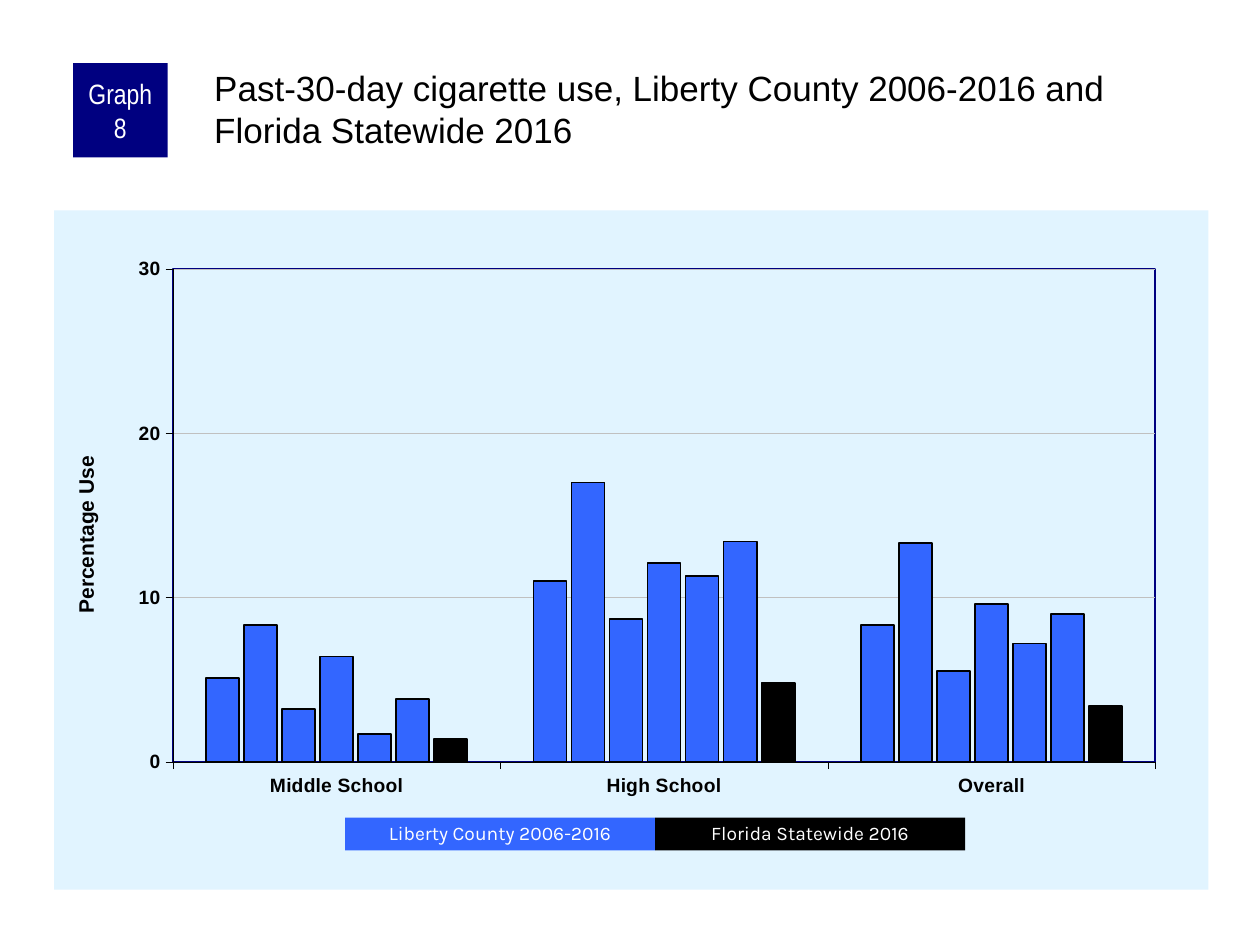
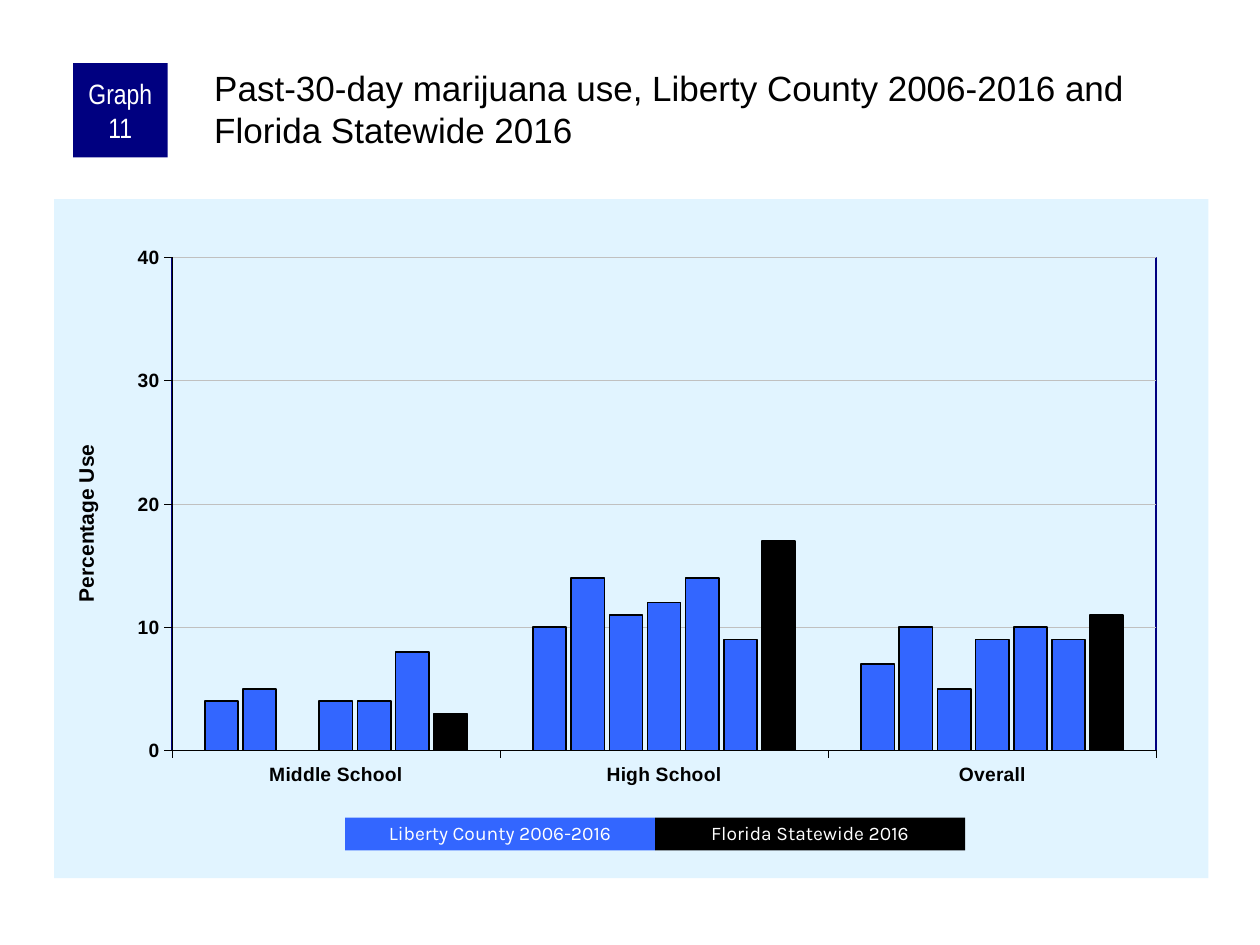
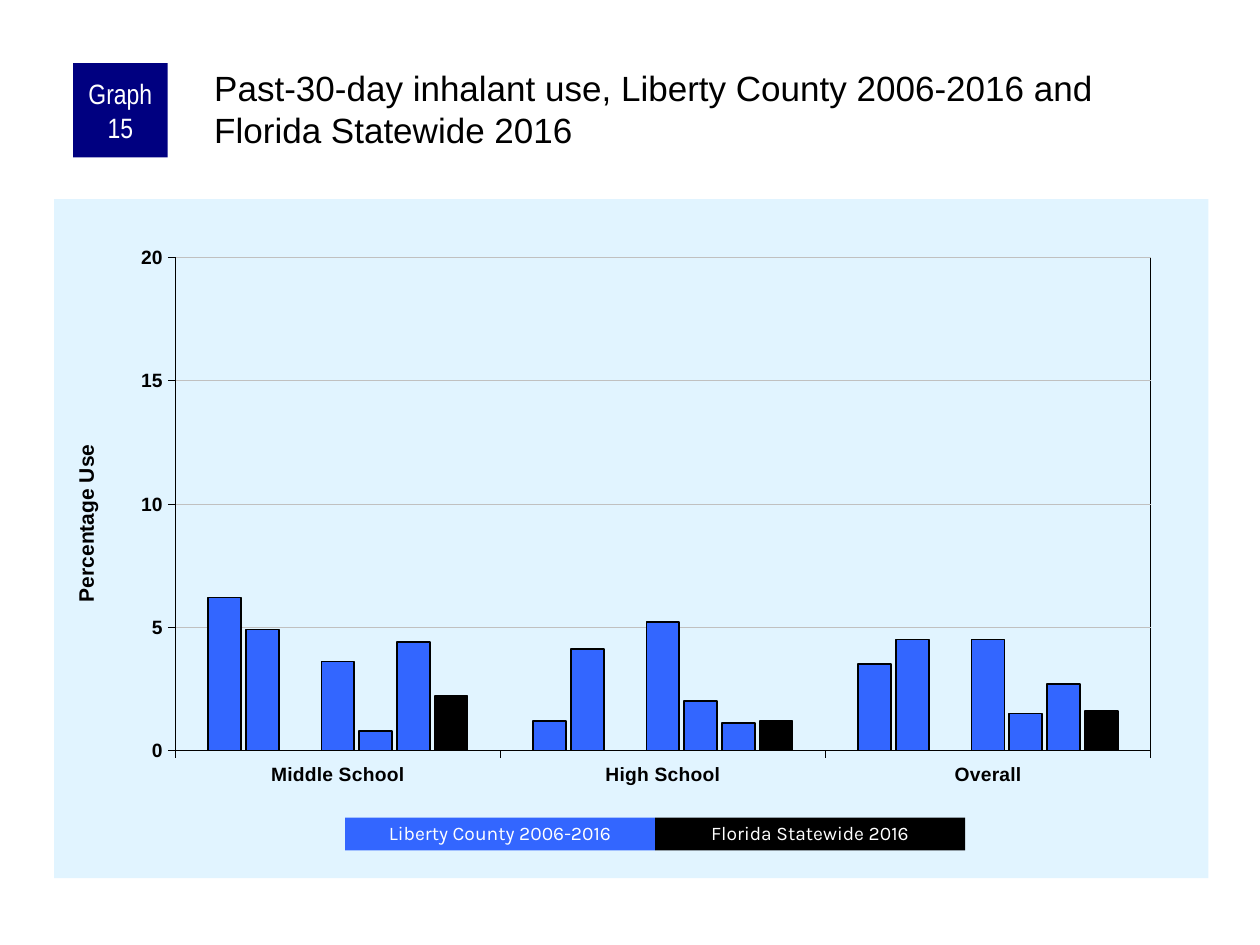
from lxml import etree
from pptx import Presentation
from pptx.chart.data import CategoryChartData
from pptx.dml.color import RGBColor
from pptx.enum.chart import XL_CHART_TYPE, XL_TICK_MARK
from pptx.enum.shapes import MSO_SHAPE
from pptx.enum.text import MSO_ANCHOR, PP_ALIGN
from pptx.oxml.ns import qn
from pptx.util import Inches, Pt

COLUMN = XL_CHART_TYPE.COLUMN_CLUSTERED
OUT, NONE = XL_TICK_MARK.OUTSIDE, XL_TICK_MARK.NONE
RECT = MSO_SHAPE.RECTANGLE
MIDDLE, TOP = MSO_ANCHOR.MIDDLE, MSO_ANCHOR.TOP
LEFT, CENTER = PP_ALIGN.LEFT, PP_ALIGN.CENTER

COLORS = {"navy": "000080", "blue": "3366FF", "black": "000000",
          "white": "FFFFFF", "panel": "E1F4FF", "grid": "C0C0C0"}
GROUPS = ["Middle School", "High School", "Overall"]
KEYS = [("Liberty County 2006-2016", "blue"), ("Florida Statewide 2016", "black")]
KEY_LEFT, KEY_WIDTH = 2.74, 2.46

# Each row of values is one survey; the last row is the statewide one.
# The plot is its left and width in percent of the chart.
GRAPHS = [
    {"number": 8, "drug": "cigarette", "top": 1.67, "peak": 30, "step": 10,
     "plot": (10.3, 85.1), "edge": ("navy", 1),
     "rows": [(5.1, 11, 8.3), (8.3, 17, 13.3), (3.2, 8.7, 5.5), (6.4, 12.1, 9.6),
              (1.7, 11.3, 7.2), (3.8, 13.4, 9), (1.4, 4.8, 3.4)]},
    {"number": 11, "drug": "marijuana", "top": 1.58, "peak": 40, "step": 10,
     "plot": (10.2, 85.3), "edge": ("navy", 1),
     "rows": [(4, 10, 7), (5, 14, 10), (0, 11, 5), (4, 12, 9),
              (4, 14, 10), (8, 9, 9), (3, 17, 11)]},
    {"number": 15, "drug": "inhalant", "top": 1.58, "peak": 20, "step": 5,
     "plot": (10.5, 84.5), "edge": ("black", 0.25),
     "rows": [(6.2, 1.2, 3.5), (4.9, 4.1, 4.5), (0, 0, 0), (3.6, 5.2, 4.5),
              (0.8, 2, 1.5), (4.4, 1.1, 2.7), (2.2, 1.2, 1.6)]},
]


def rgb(name):
    return RGBColor.from_string(COLORS[name])


def style_font(font, size, color="black", name="Arial", bold=False):
    font.size, font.name, font.bold = Pt(size), name, bold
    font.color.rgb = rgb(color)


def style_line(line, color, width):
    line.color.rgb = rgb(color)
    line.width = Pt(width)


def put_text(shape, text, size, color="black", font="Arial", align=LEFT,
             anchor=TOP, insets=(0.1, 0.05, 0.1, 0.05), spacing=None):
    frame = shape.text_frame
    frame.word_wrap = True
    frame.vertical_anchor = anchor
    (frame.margin_left, frame.margin_top,
     frame.margin_right, frame.margin_bottom) = map(Inches, insets)
    para = frame.paragraphs[0]
    para.alignment, para.line_spacing = align, spacing
    run = para.add_run()
    run.text = text
    style_font(run.font, size, color, font)


def add_box(slide, place, fill, text, size, font, **form):
    box = slide.shapes.add_shape(RECT, *map(Inches, place))
    box.shadow.inherit = False
    box.fill.solid()
    box.fill.fore_color.rgb = rgb(fill)
    box.line.fill.background()
    put_text(box, text, size, "white", font, CENTER, MIDDLE, **form)


def add_title(slide, text):
    box = slide.shapes.add_textbox(*map(Inches, (1.67, 0.5, 7.92, 0.83)))
    put_text(box, text, 20, insets=(0.03, 0.03, 0, 0))


def add_legend(slide):
    for i, (label, color) in enumerate(KEYS):
        place = (KEY_LEFT + i * KEY_WIDTH, 6.49, KEY_WIDTH, 0.26)
        add_box(slide, place, color, label, 11, "Karla", spacing=0.9)


def set_layout(parent, index, modes, **sizes):
    """Place a chart part by percentages of the chart's size."""
    for old in parent.findall(qn("c:layout")):
        parent.remove(old)
    layout = etree.Element(qn("c:layout"))
    manual = etree.SubElement(layout, qn("c:manualLayout"))
    parts = modes | {key: size / 100 for key, size in sizes.items()}
    for key, val in parts.items():
        etree.SubElement(manual, qn("c:" + key)).set("val", str(val))
    parent.insert(index, layout)


def add_look(parent, fill=None, line=None):
    """Return shape properties for a chart part, with a fill and a line."""
    props = etree.SubElement(parent, qn("c:spPr"))

    def paint(node, color):
        solid = etree.SubElement(node, qn("a:solidFill"))
        etree.SubElement(solid, qn("a:srgbClr")).set("val", COLORS[color])

    if fill:
        paint(props, fill)
    else:
        etree.SubElement(props, qn("a:noFill"))
    edge = etree.SubElement(props, qn("a:ln"))
    if line:
        edge.set("w", str(Pt(line[1])))
        paint(edge, line[0])
    else:
        etree.SubElement(edge, qn("a:noFill"))
    return props


def style_axes(chart, peak, step):
    for axis in (chart.category_axis, chart.value_axis):
        axis.major_tick_mark, axis.minor_tick_mark = OUT, NONE
        style_font(axis.tick_labels.font, 11, bold=True)
        style_line(axis.format.line, "black", 0.25)
    axis = chart.value_axis
    axis.minimum_scale, axis.maximum_scale, axis.major_unit = 0, peak, step
    axis.has_major_gridlines = True
    style_line(axis.major_gridlines.format.line, "grid", 0.25)
    title = axis.axis_title
    run = title.text_frame.paragraphs[0].add_run()
    run.text = "Percentage Use"
    style_font(run.font, 12, bold=True)
    body = title._element.find(".//" + qn("a:bodyPr"))
    body.set("rot", "-5400000")
    body.set("vert", "horz")
    set_layout(title._element, 1, {"xMode": "edge", "yMode": "edge"}, x=1.3, y=35.6)


def add_graph(slide, graph):
    data = CategoryChartData()
    data.categories = GROUPS
    for i, row in enumerate(graph["rows"], 1):
        data.add_series(f"Series {i}", row)
    place = map(Inches, (0.43, graph["top"], 9.16, 5.39))
    chart = slide.shapes.add_chart(COLUMN, *place, data).chart
    chart.has_legend = chart.has_title = False
    style_font(chart.font, 8)
    style_axes(chart, graph["peak"], graph["step"])
    plot = chart.plots[0]
    plot.gap_width, plot.overlap, plot.vary_by_categories = 200, -15, False
    last = len(graph["rows"]) - 1
    for i, bars in enumerate(plot.series):
        bars.invert_if_negative = False
        bars.format.fill.solid()
        bars.format.fill.fore_color.rgb = rgb("black" if i == last else "blue")
        style_line(bars.format.line, "black", 1)

    space = chart._chartSpace
    body = space.find(qn("c:chart"))
    body.addnext(add_look(space, fill="panel"))
    area = body.find(qn("c:plotArea"))
    left, width = graph["plot"]
    modes = {"layoutTarget": "inner", "xMode": "edge", "yMode": "edge"}
    set_layout(area, 0, modes, x=left, y=8.6, w=width, h=72.6)
    add_look(area, line=graph["edge"])


def main():
    deck = Presentation()
    deck.slide_width, deck.slide_height = Inches(10), Inches(7.5)
    for graph in GRAPHS:
        slide = deck.slides.add_slide(deck.slide_layouts[6])
        add_graph(slide, graph)
        add_box(slide, (0.58, 0.5, 0.75, 0.75), "navy", f"Graph {graph['number']}",
                16, "Arial Narrow", insets=(0.05, 0, 0.05, 0))
        add_title(slide, f"Past-30-day {graph['drug']} use, Liberty County "
                         "2006-2016 and Florida Statewide 2016")
        add_legend(slide)
    deck.save("out.pptx")


if __name__ == "__main__":
    main()
